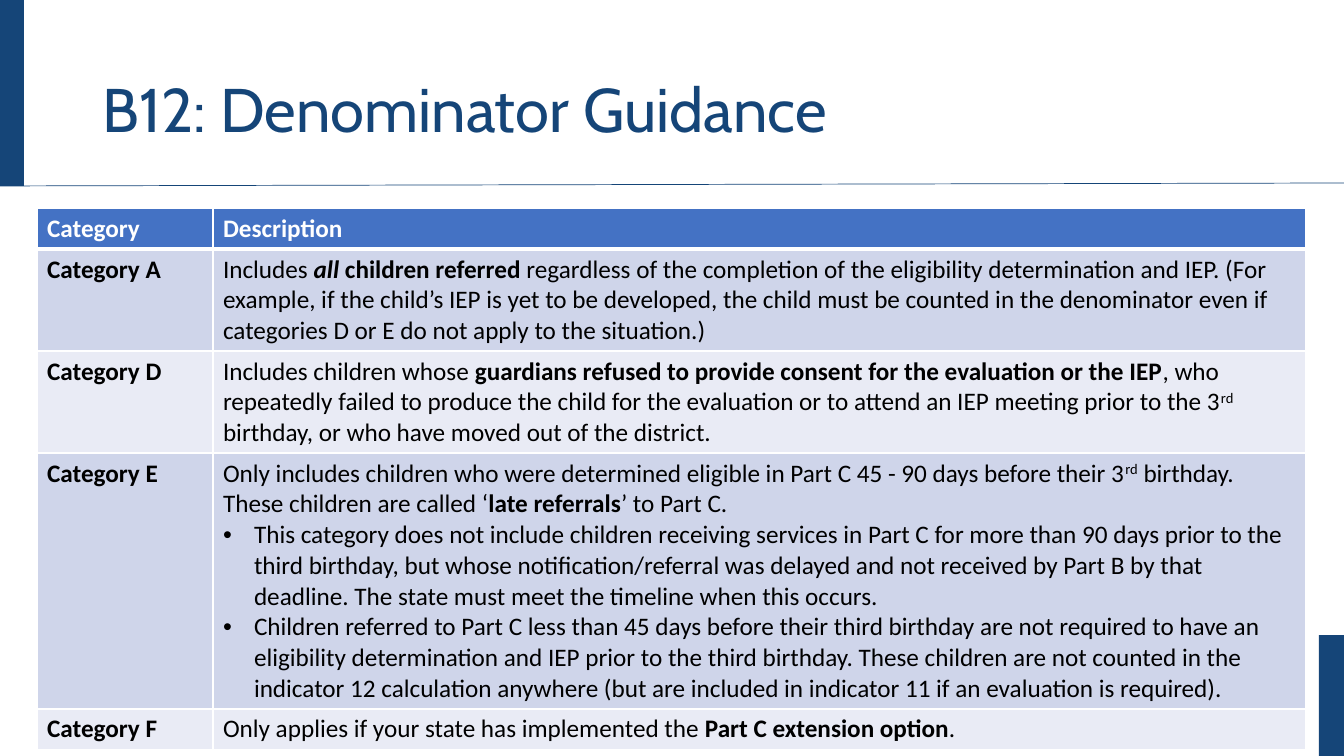
from lxml import etree
from pptx import Presentation
from pptx.dml.color import RGBColor
from pptx.enum.shapes import MSO_CONNECTOR, MSO_SHAPE
from pptx.enum.text import MSO_ANCHOR
from pptx.oxml.ns import qn
from pptx.util import Emu, Pt

SCALE = 914400 / 100.8  # EMU per px
NAVY, BLUE, WHITE, BLACK = "154578", "4472C4", "FFFFFF", "000000"
BANDS = ["CFD5EA", "E9EBF5"]
rgb = RGBColor.from_string


def px(n):
    return Emu(round(n * SCALE))


def add_run(p, text, size, font, color, style=""):
    """Style letters: b bold, i italic, ^ superscript."""
    r = p.add_run()
    r.text = text
    f = r.font
    f.size, f.name, f.color.rgb = Pt(size), font, rgb(color)
    f.bold, f.italic = "b" in style, "i" in style
    if "^" in style:
        r._r.get_or_add_rPr().set("baseline", "30000")


prs = Presentation()
prs.slide_width, prs.slide_height = px(1344), px(756)
s = prs.slides.add_slide(prs.slide_layouts[6])

# Side bars
for x, y, w, h in [(-2, 0, 26, 186), (1319, 635, 25, 121)]:
    sp = s.shapes.add_shape(MSO_SHAPE.RECTANGLE, px(x), px(y), px(w), px(h))
    sp.shadow.inherit = False
    sp.fill.solid()
    sp.fill.fore_color.rgb = rgb(NAVY)
    sp.line.fill.background()

# Rule under the title
rule = s.shapes.add_connector(MSO_CONNECTOR.STRAIGHT, px(-2), px(186), px(1344), px(183))
rule.line.color.rgb = rgb(NAVY)
rule.line.width = Pt(0.5)
etree.SubElement(rule._element.spPr, qn("a:effectLst"))

# Title
tf = s.shapes.add_textbox(px(93), px(40), px(1159), px(146)).text_frame
tf.word_wrap = True
tf.vertical_anchor = MSO_ANCHOR.MIDDLE
p = tf.paragraphs[0]
p.line_spacing = 0.9
add_run(p, "B12: Denominator Guidance", 44, "Cabin", NAVY)

# Table content: category, row height, paragraphs of (text, style) runs;
# every paragraph after the first is a bullet
rows = [
    ("Category", 41, [[("Description", "b")]]),
    ("Category A", 102, [[
        ("Includes ", ""), ("all", "bi"), (" children referred ", "b"),
        ("regardless of the completion of the eligibility determination and IEP. "
         "(For example, if the child’s IEP is yet to be developed, the child must be "
         "counted in the denominator even if categories D or E do not apply to the "
         "situation.)", "")]]),
    ("Category D", 102, [[
        ("Includes children whose ", ""),
        ("guardians refused to provide consent for the evaluation or the IEP", "b"),
        (", who repeatedly failed to produce the child for the evaluation or to attend "
         "an IEP meeting prior to the 3", ""), ("rd", "^"),
        (" birthday, or who have moved out of the district.", "")]]),
    ("Category E", 256, [
        [("Only includes children who were determined eligible in Part C 45 - 90 days "
          "before their 3", ""), ("rd", "^"),
         (" birthday. These children are called ‘", ""), ("late referrals", "b"),
         ("’ to Part C.", "")],
        [("This category does not include children receiving services in Part C for more "
          "than 90 days prior to the third birthday, but whose notification/referral was "
          "delayed and not received by Part B by that deadline. The state must meet the "
          "timeline when this occurs.", "")],
        [("Children referred to Part C less than 45 days before their third birthday are "
          "not required to have an eligibility determination and IEP prior to the third "
          "birthday. These children are not counted in the indicator 12 calculation "
          "anywhere (but are included in indicator 11 if an evaluation is required).", "")]]),
    ("Category F", 41, [[
        ("Only applies if your state has implemented the ", ""),
        ("Part C extension option", "b"), (".", "")]]),
]

# Table
col_widths = [176, 1093]
table = s.shapes.add_table(len(rows), 2, px(37), px(208), px(sum(col_widths)),
                           px(sum(h for _, h, _ in rows))).table
for col, w in zip(table.columns, col_widths):
    col.width = px(w)

for i, (category, height, description) in enumerate(rows):
    table.rows[i].height = px(height)
    fill = BANDS[(i - 1) % 2] if i else BLUE
    color = BLACK if i else WHITE
    for j, paras in enumerate([[[(category, "b")]], description]):
        cell = table.cell(i, j)

        # White borders, thicker under the header
        tcPr = cell._tc.get_or_add_tcPr()
        for side in "LRTB":
            thick = (i, side) in [(0, "B"), (1, "T")]
            ln = etree.SubElement(tcPr, qn(f"a:ln{side}"), w=str(Pt(3 if thick else 1)))
            solid = etree.SubElement(ln, qn("a:solidFill"))
            etree.SubElement(solid, qn("a:srgbClr"), val=WHITE)
        cell.fill.solid()
        cell.fill.fore_color.rgb = rgb(fill)

        # Text
        tf = cell.text_frame
        for k, runs in enumerate(paras):
            p = tf.add_paragraph() if k else tf.paragraphs[0]
            if k:
                pPr = p._p.get_or_add_pPr()
                pPr.set("marL", str(px(31)))
                pPr.set("indent", str(-px(31)))
                etree.SubElement(pPr, qn("a:buFont"), typeface="Arial")
                etree.SubElement(pPr, qn("a:buChar"), char="•")
            for text, style in runs:
                add_run(p, text, 18, "Calibri", color, style)

prs.save("out.pptx")
